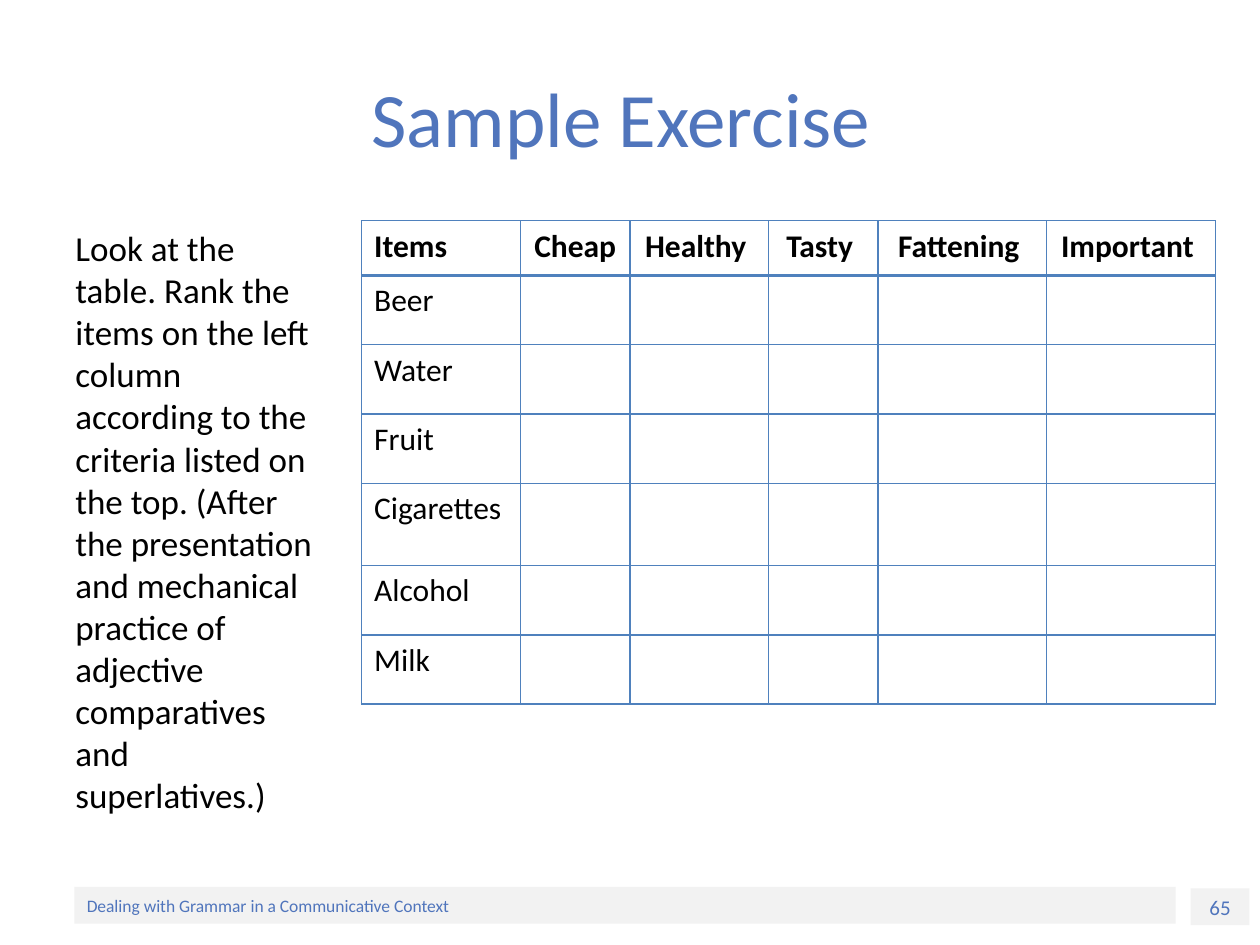
from lxml import etree
from pptx import Presentation
from pptx.dml.color import RGBColor
from pptx.enum import shapes, text
from pptx.oxml import ns
from pptx.util import Cm, Pt

TITLE = "Sample Exercise "
INSTRUCTIONS = (
    "Look at the table. Rank the items on the left column according to the "
    "criteria listed on the top. (After the presentation and mechanical practice "
    "of adjective comparatives and superlatives.)"
)
HEADERS = ["Items", "Cheap", "Healthy ", "Tasty ", "Fattening ", "Important "]
ITEMS = ["Beer", "Water", "Fruit", "Cigarettes", "Alcohol", "Milk"]
COLUMN_WIDTHS = [3.2, 2.21, 2.79, 2.21, 3.4, 3.4]
ROW_HEIGHTS = [1.1, 1.4, 1.4, 1.4, 1.65, 1.4, 1.4]
FOOTER_BARS = [
    ("65", 24, 17.91, 1.19, 12, text.PP_ALIGN.CENTER),
    ("Dealing with Grammar in a Communicative Context", 1.5, 17.88, 22.2, 10, text.PP_ALIGN.LEFT),
]
FOOTER_HEIGHT = 0.74
FONT = "Calibri"
COLORS = {"accent": "5075BC", "bar": "F2F2F2", "text": "000000", "border": "4F81BD"}


def color(name):
    return RGBColor.from_string(COLORS[name])


def write(frame, content, size, color_name, alignment, bold=False):
    frame.text = content
    paragraph = frame.paragraphs[0]
    paragraph.alignment = alignment
    for run in paragraph.runs:
        run.font.name = FONT
        run.font.size = Pt(size)
        run.font.bold = bold
        run.font.color.rgb = color(color_name)


def add_footer_bar(slide, content, left, top, width, size, alignment):
    bar = slide.shapes.add_shape(
        shapes.MSO_SHAPE.RECTANGLE, Cm(left), Cm(top), Cm(width), Cm(FOOTER_HEIGHT)
    )
    bar.shadow.inherit = False
    bar.fill.solid()
    bar.fill.fore_color.rgb = color("bar")
    bar.line.fill.background()
    bar.text_frame.vertical_anchor = text.MSO_ANCHOR.MIDDLE
    write(bar.text_frame, content, size, "accent", alignment)


def set_borders(cell, widths):
    properties = cell._tc.get_or_add_tcPr()
    for side, width in widths.items():
        line = etree.SubElement(properties, ns.qn(f"a:ln{side}"), w=str(Pt(width)))
        fill = etree.SubElement(line, ns.qn("a:solidFill"))
        etree.SubElement(fill, ns.qn("a:srgbClr"), val=COLORS["border"])


def add_ranking_table(slide):
    rows = [HEADERS] + [[item] + [""] * (len(HEADERS) - 1) for item in ITEMS]
    table = slide.shapes.add_table(
        len(rows), len(HEADERS), Cm(7.29), Cm(4.45),
        Cm(sum(COLUMN_WIDTHS)), Cm(sum(ROW_HEIGHTS)),
    ).table
    table.first_row = False
    table.horz_banding = False
    for column, width in zip(table.columns, COLUMN_WIDTHS):
        column.width = Cm(width)
    for row, height in zip(table.rows, ROW_HEIGHTS):
        row.height = Cm(height)
    for row_index, row in enumerate(rows):
        header = row_index == 0
        for column_index, content in enumerate(row):
            cell = table.cell(row_index, column_index)
            if not header:
                alignment = text.PP_ALIGN.JUSTIFY
            elif column_index == 0:
                alignment = text.PP_ALIGN.LEFT
            else:
                alignment = text.PP_ALIGN.CENTER
            write(cell.text_frame, content, 18, "text", alignment, header)
            top = 2 if row_index == 1 else 1
            bottom = 2 if header else 1
            set_borders(cell, {"L": 1, "R": 1, "T": top, "B": bottom})
            cell.fill.background()


def main():
    presentation = Presentation()
    presentation.slide_width = Cm(25.4)
    presentation.slide_height = Cm(19.05)
    slide = presentation.slides.add_slide(presentation.slide_layouts[5])

    for bar in FOOTER_BARS:
        add_footer_bar(slide, *bar)

    title = slide.shapes.title
    title.left, title.top, title.width, title.height = Cm(1.27), Cm(0.76), Cm(22.86), Cm(3.18)
    title.text_frame.vertical_anchor = text.MSO_ANCHOR.MIDDLE
    write(title.text_frame, TITLE, 44, "accent", text.PP_ALIGN.CENTER)

    instructions = slide.shapes.add_textbox(Cm(1.27), Cm(4.45), Cm(5.44), Cm(12.57))
    instructions.text_frame.word_wrap = True
    write(instructions.text_frame, INSTRUCTIONS, 20, "text", text.PP_ALIGN.LEFT)

    add_ranking_table(slide)
    presentation.save("out.pptx")


if __name__ == "__main__":
    main()
